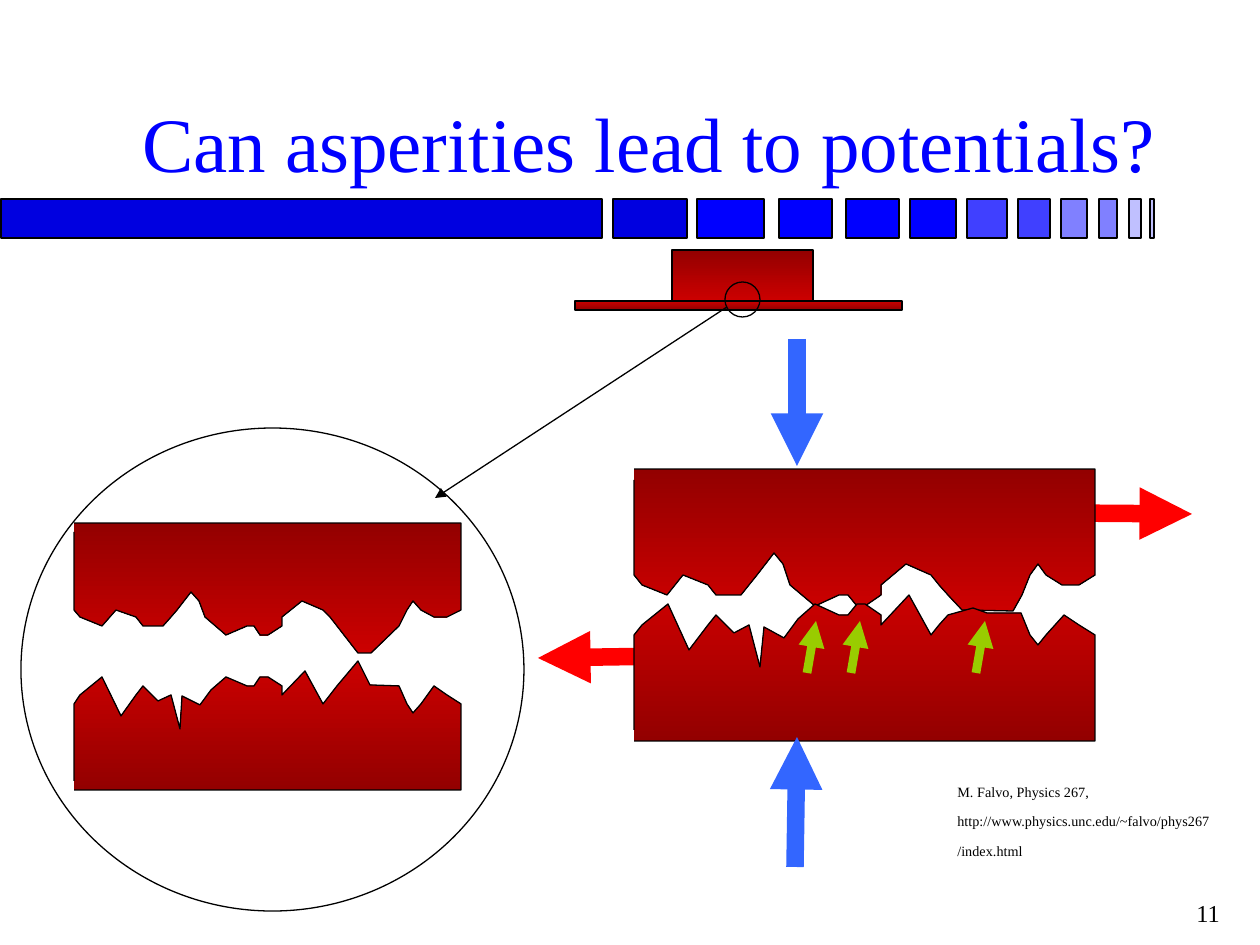
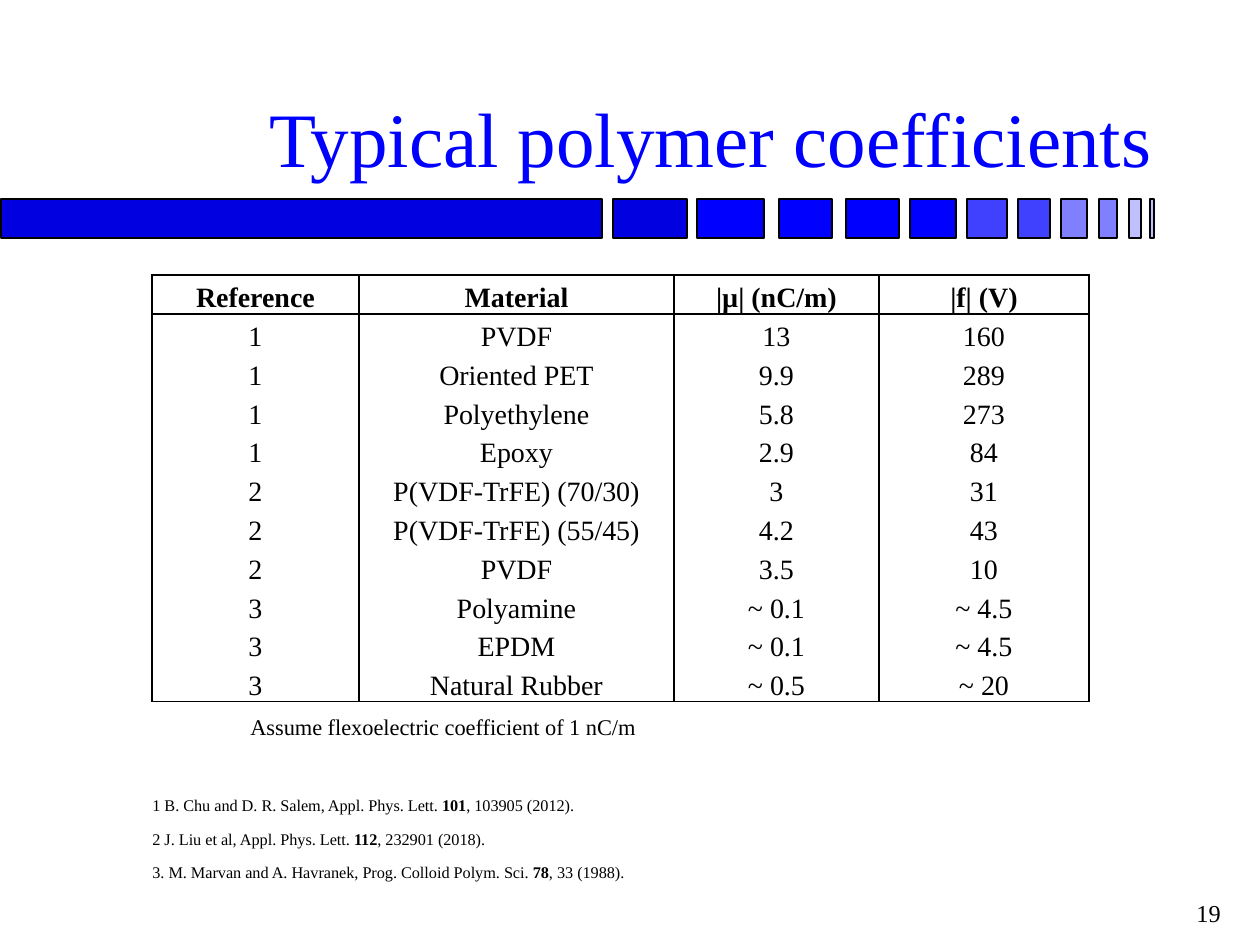
from lxml import etree
from pptx import Presentation
from pptx.dml.color import RGBColor
from pptx.enum.shapes import MSO_CONNECTOR, MSO_SHAPE
from pptx.enum.text import MSO_ANCHOR, PP_ALIGN
from pptx.oxml.ns import qn
from pptx.util import Pt

PX = 914400 / 126
FONT = "Times New Roman"
BLACK = RGBColor(0x00, 0x00, 0x00)
BLUE = RGBColor(0x00, 0x00, 0xFF)
DEEP_BLUE = RGBColor(0x00, 0x00, 0xE0)
MID_BLUE = RGBColor(0x40, 0x40, 0xFF)
LIGHT_BLUE = RGBColor(0x80, 0x80, 0xFF)
PALE_BLUE = RGBColor(0xC0, 0xC0, 0xFF)
LOAD_BLUE = RGBColor(0x33, 0x66, 0xFF)
SHEAR_RED = RGBColor(0xFF, 0x00, 0x00)
CONTACT_GREEN = RGBColor(0x99, 0xCC, 0x00)
SLAB_RED = RGBColor(0xCC, 0x00, 0x00)
SLAB_SHADE = "47500"

RECTANGLE = MSO_SHAPE.RECTANGLE
ELLIPSE = MSO_SHAPE.OVAL
STRAIGHT = MSO_CONNECTOR.STRAIGHT
LEFT, CENTER, RIGHT = PP_ALIGN.LEFT, PP_ALIGN.CENTER, PP_ALIGN.RIGHT
TOP, BOTTOM = MSO_ANCHOR.TOP, MSO_ANCHOR.BOTTOM

# Left edge, width and colour of each bar in the title band
BAND_BARS = [
    (1, 601, DEEP_BLUE), (613, 74, DEEP_BLUE), (697, 67, BLUE),
    (779, 53, BLUE), (846, 53, BLUE), (910, 46, BLUE),
    (967, 40, MID_BLUE), (1018, 32, MID_BLUE), (1061, 26, LIGHT_BLUE),
    (1099, 18, LIGHT_BLUE), (1129, 12, PALE_BLUE), (1150, 4, PALE_BLUE),
]

# Rough edges, left to right, relative to the top left corner of each slab
APART_UPPER = [
    (0, 87), (6, 94), (28, 103), (42, 87), (62, 94), (69, 103), (89, 103),
    (97, 94), (103, 87), (117, 69), (125, 78), (131, 94), (152, 112),
    (173, 103), (180, 103), (186, 112), (194, 112), (208, 103), (208, 94),
    (228, 78), (249, 87), (256, 94), (263, 103), (284, 130), (297, 130),
    (325, 103), (333, 87), (339, 78), (347, 87), (360, 94), (373, 94),
    (387, 87),
]
APART_LOWER = [
    (0, 43), (6, 34), (28, 16), (47, 55), (62, 34), (69, 25), (84, 40),
    (97, 34), (106, 68), (108, 35), (126, 44), (137, 29), (152, 16),
    (173, 25), (180, 25), (186, 16), (194, 16), (208, 25), (208, 34),
    (231, 10), (249, 43), (256, 34), (263, 25), (284, 0), (296, 24),
    (325, 25), (333, 43), (339, 52), (347, 43), (360, 25), (373, 34),
    (387, 43),
]
PRESSED_UPPER = [
    (0, 106), (8, 116), (33, 126), (49, 106), (74, 116), (82, 126),
    (107, 126), (115, 116), (123, 106), (140, 84), (149, 95), (156, 116),
    (181, 137), (205, 126), (214, 126), (223, 137), (231, 137), (247, 126),
    (247, 116), (272, 95), (297, 106), (305, 116), (314, 126), (328, 141),
    (379, 142), (388, 126), (396, 106), (404, 95), (412, 106), (428, 116),
    (445, 116), (461, 106),
]
PRESSED_LOWER = [
    (0, 40), (8, 30), (34, 9), (55, 55), (74, 30), (82, 20), (100, 38),
    (115, 30), (126, 72), (130, 32), (150, 43), (164, 24), (181, 9),
    (205, 20), (214, 20), (223, 9), (231, 9), (247, 20), (247, 30),
    (275, 0), (297, 40), (305, 30), (314, 20), (339, 13), (353, 18),
    (387, 18), (396, 40), (404, 50), (412, 40), (430, 20), (445, 30),
    (461, 40),
]

COEFFICIENTS = [
    ("Reference", "Material", "|µ| (nC/m)", "|f| (V)"),
    ("1", "PVDF", "13", "160"),
    ("1", "Oriented PET", "9.9", "289"),
    ("1", "Polyethylene", "5.8", "273"),
    ("1", "Epoxy", "2.9", "84"),
    ("2", "P(VDF-TrFE) (70/30)", "3", "31"),
    ("2", "P(VDF-TrFE) (55/45)", "4.2", "43"),
    ("2", "PVDF", "3.5", "10"),
    ("3", "Polyamine", "~ 0.1", "~ 4.5"),
    ("3", "EPDM", "~ 0.1", "~ 4.5"),
    ("3", "Natural Rubber", "~ 0.5", "~ 20"),
]
REFERENCES = [
    ("1 B. Chu and D. R. Salem, Appl. Phys. Lett. ", "101", ", 103905 (2012)."),
    ("2 J. Liu et al, Appl. Phys. Lett. ", "112", ", 232901 (2018)."),
    ("3. M. Marvan and A. Havranek, Prog. Colloid Polym. Sci. ", "78", ", 33 (1988)."),
]


def px(length):
    return round(length * PX)


def write_text(frame, paragraphs, size, color=BLACK, align=LEFT, bold=False,
               raised=False):
    """Fill a frame; every second run of a paragraph flips between plain and bold."""
    for number, runs in enumerate(paragraphs):
        paragraph = frame.add_paragraph() if number else frame.paragraphs[0]
        paragraph.alignment = align
        for position, text in enumerate(runs):
            run = paragraph.add_run()
            run.text = text
            run.font.name = FONT
            run.font.size = Pt(size)
            run.font.bold = bold != (position % 2 == 1)
            run.font.color.rgb = color
            if raised:
                run._r.get_or_add_rPr().set("baseline", "30000")


def add_text(slide, box, paragraphs, size, anchor=TOP, **text_format):
    frame = slide.shapes.add_textbox(*map(px, box)).text_frame
    frame.word_wrap = True
    frame.vertical_anchor = anchor
    write_text(frame, paragraphs, size, **text_format)


def style_outline(shape, width):
    shape.shadow.inherit = False
    shape.line.color.rgb = BLACK
    shape.line.width = Pt(width)


def add_shape(slide, kind, box, fill=None, line_width=0.75):
    shape = slide.shapes.add_shape(kind, *map(px, box))
    style_outline(shape, line_width)
    if fill is None:
        shape.fill.background()
    else:
        shape.fill.solid()
        shape.fill.fore_color.rgb = fill
    return shape


def fill_slab(shape, dark_on_top):
    shape.fill.gradient()
    shape.fill.gradient_angle = 270
    for stop in shape.fill.gradient_stops:
        stop.color.rgb = SLAB_RED
    colors = list(shape._element.spPr.iter(qn("a:srgbClr")))[:2]
    dark = colors[0 if dark_on_top else 1]
    etree.SubElement(dark, qn("a:shade"), val=SLAB_SHADE)


def add_arrow(slide, start, end, color, width):
    arrow = slide.shapes.add_connector(STRAIGHT, *map(px, start + end))
    arrow.line.color.rgb = color
    arrow.line.width = Pt(width)
    etree.SubElement(arrow.line._get_or_add_ln(), qn("a:tailEnd"), type="triangle")
    etree.SubElement(arrow._element.spPr, qn("a:effectLst"))


def add_slab(slide, left, top, rough_edge, flat_y, start_y, dark_on_top):
    """Draw a slab whose outline is left open beside its flat left corner."""
    right = rough_edge[-1][0]
    builder = slide.shapes.build_freeform(0, start_y, scale=PX)
    builder.add_line_segments(rough_edge + [(right, flat_y), (0, flat_y)], close=False)
    slab = builder.convert_to_shape(px(left), px(top))
    style_outline(slab, 0.75)
    fill_slab(slab, dark_on_top)


def add_band(slide, left, top, height):
    for bar_left, width, color in reversed(BAND_BARS):
        add_shape(slide, RECTANGLE, (left + bar_left, top, width, height), color, 1)


def add_base_slide(presentation, title, title_box, number):
    slide = presentation.slides.add_slide(presentation.slide_layouts[6])
    add_band(slide, 0, 199, 39)
    add_text(slide, (1184, 887, 60, 50), [[number]], 24, raised=True)
    add_text(slide, title_box, [[title]], 44, anchor=BOTTOM, color=BLUE, align=RIGHT)
    return slide


def add_block_on_plate(slide, left, top):
    block = add_shape(slide, RECTANGLE, (left + 97, top, 141, 51))
    fill_slab(block, True)
    plate = add_shape(slide, RECTANGLE, (left, top + 51, 327, 9))
    fill_slab(plate, False)
    add_shape(slide, ELLIPSE, (left + 150, top + 32, 35, 35))


def add_magnified_gap(slide, left, top):
    add_slab(slide, left + 53, top + 95, APART_UPPER, 0, 9, True)
    add_slab(slide, left + 53, top + 233, APART_LOWER, 129, 120, False)
    add_shape(slide, ELLIPSE, (left, top, 503, 483))


def add_pressed_slabs(slide, left, top):
    def arrow(start, end, color, width):
        points = [(left + x, top + y) for x, y in (start, end)]
        add_arrow(slide, *points, color, width)

    arrow((428, 44), (558, 45), SHEAR_RED, 10)
    arrow((35, 187), (-96, 189), SHEAR_RED, 10)
    add_slab(slide, left, top, PRESSED_UPPER, 0, 11, True)
    add_slab(slide, left, top + 126, PRESSED_LOWER, 146, 135, False)
    arrow((163, -130), (163, -3), LOAD_BLUE, 10)
    arrow((161, 398), (163, 268), LOAD_BLUE, 10)
    for contact in (173, 217, 342):
        arrow((contact, 204), (contact + 9, 152), CONTACT_GREEN, 5)


def build_asperities_slide(presentation):
    slide = add_base_slide(presentation, "Can asperities lead to potentials?",
                           (98, 32, 1071, 162), "11")
    add_pressed_slabs(slide, 634, 469)
    add_block_on_plate(slide, 575, 250)
    add_magnified_gap(slide, 21, 428)
    add_arrow(slide, (727, 307), (435, 498), BLACK, 0.75)
    source = "M. Falvo, Physics 267, http://www.physics.unc.edu/~falvo/phys267/index.html"
    add_text(slide, (945, 774, 278, 130), [[source]], 14, raised=True)


def set_borders(cell, visible_edges):
    properties = cell._tc.get_or_add_tcPr()
    for position, edge in enumerate("LRTB"):
        line = etree.Element(qn(f"a:ln{edge}"), w=str(Pt(1)))
        if edge in visible_edges:
            fill = etree.SubElement(line, qn("a:solidFill"))
            etree.SubElement(fill, qn("a:srgbClr"), val=str(BLACK))
        else:
            etree.SubElement(line, qn("a:noFill"))
        properties.insert(position, line)


def add_coefficient_table(slide, left, top, column_widths, height):
    row_count = len(COEFFICIENTS)
    box = (left, top, sum(column_widths), height)
    table = slide.shapes.add_table(row_count, len(column_widths),
                                   *map(px, box)).table
    table.first_row = table.horz_banding = False
    for column, width in zip(table.columns, column_widths):
        column.width = px(width)
    for row_number, values in enumerate(COEFFICIENTS):
        table.rows[row_number].height = px(height / row_count)
        edges = {0: "LRTB", 1: "LRT", row_count - 1: "LRB"}.get(row_number, "LR")
        for column_number, value in enumerate(values):
            cell = table.cell(row_number, column_number)
            cell.fill.background()
            cell.vertical_anchor = BOTTOM
            cell.margin_left = cell.margin_right = cell.margin_top = px(1)
            cell.margin_bottom = 0
            write_text(cell.text_frame, [[value]], 16, align=CENTER,
                       bold=row_number == 0)
            set_borders(cell, edges)


def build_coefficients_slide(presentation):
    slide = add_base_slide(presentation, "Typical polymer coefficients",
                           (94, 26, 1071, 163), "19")
    add_text(slide, (140, 786, 961, 115), REFERENCES, 16, raised=True)
    add_coefficient_table(slide, 152, 275, (207, 315, 205, 210), 427)
    add_text(slide, (238, 702, 806, 60),
             [["Assume flexoelectric coefficient of 1 nC/m"]], 22, raised=True)


def main():
    presentation = Presentation()
    presentation.slide_width = px(1260)
    presentation.slide_height = px(945)
    build_asperities_slide(presentation)
    build_coefficients_slide(presentation)
    presentation.save("out.pptx")


if __name__ == "__main__":
    main()
